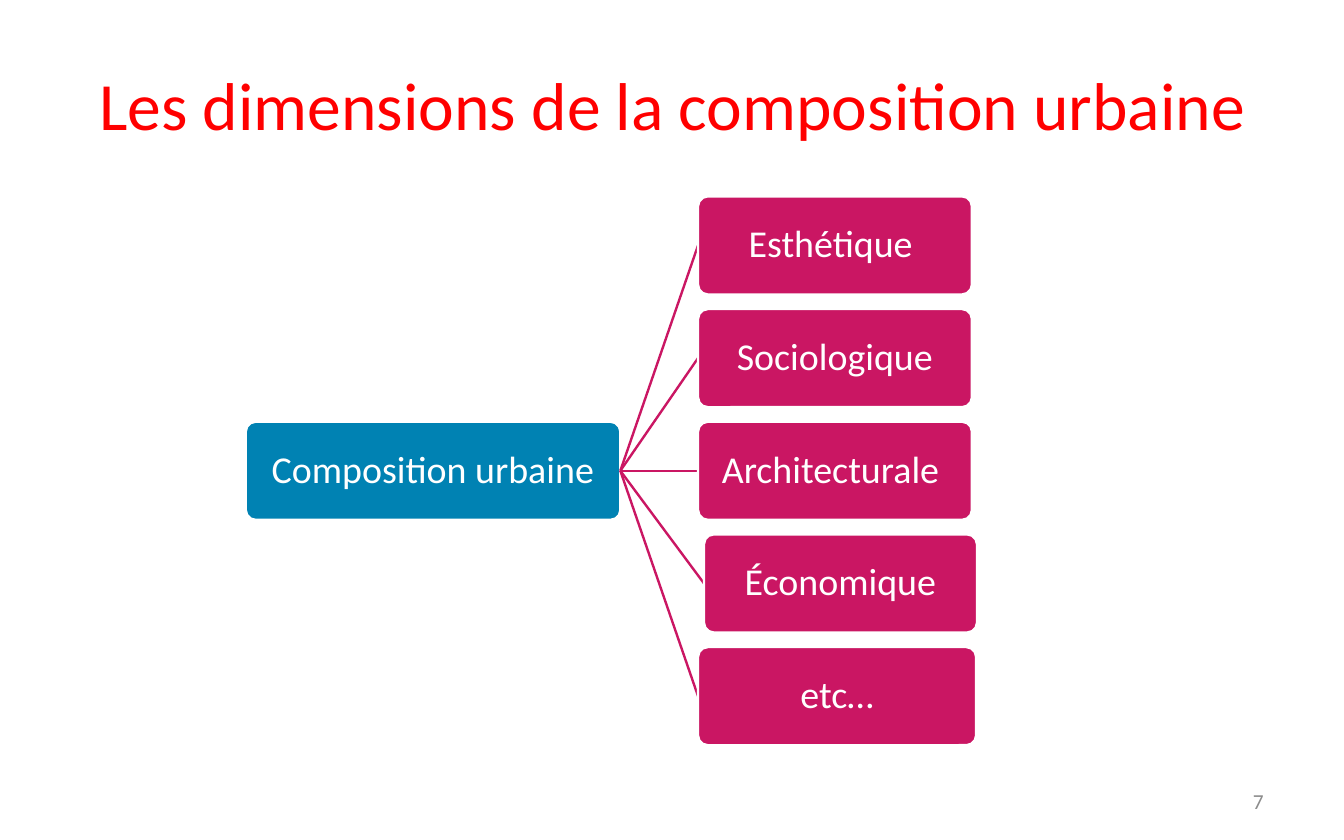
import pptx
import pptx.dml.color
import pptx.enum.shapes
import pptx.enum.text
import pptx.util
from pptx.util import Inches

FONT = "Calibri"
WHITE, RED, BLUE, PINK, GREY = "FFFFFF", "FF0000", "0082B3", "CA1663", "8C8C8C"
ALIGN = pptx.enum.text.PP_ALIGN
BOX_H = 1.15
ROW_STEP = 1.32

# Label, shift to the right, width
DIMENSIONS = [
    ("Esthétique ", 0, 3.21),
    ("Sociologique", 0, 3.21),
    ("Architecturale ", 0, 3.21),
    ("Économique", 0.07, 3.2),
    ("etc…", 0, 3.26),
]


def rgb(value):
    return pptx.dml.color.RGBColor.from_string(value)


def set_text(sp, text, size, color, align, inset_x, inset_y):
    tf = sp.text_frame
    tf.text = text
    tf.word_wrap = True
    tf.auto_size = pptx.enum.text.MSO_AUTO_SIZE.NONE
    tf.vertical_anchor = pptx.enum.text.MSO_ANCHOR.MIDDLE
    tf.margin_left = tf.margin_right = Inches(inset_x)
    tf.margin_top = tf.margin_bottom = Inches(inset_y)
    p = tf.paragraphs[0]
    p.alignment = align
    font = p.runs[0].font
    font.name = FONT
    font.size = pptx.util.Pt(size)
    font.color.rgb = rgb(color)
    return p


def add_title(s, x, y, w, h):
    sp = s.shapes.title
    sp.left, sp.top, sp.width, sp.height = map(Inches, (x, y, w, h))
    set_text(sp, "Les dimensions de la composition urbaine", 57, RED,
             ALIGN.CENTER, 0.15, 0.07)


def add_node(s, text, fill, x, y, w):
    sp = s.shapes.add_shape(pptx.enum.shapes.MSO_SHAPE.ROUNDED_RECTANGLE,
                            Inches(x), Inches(y), Inches(w), Inches(BOX_H))
    sp.adjustments[0] = 0.1
    sp.shadow.inherit = False
    sp.fill.solid()
    sp.fill.fore_color.rgb = rgb(fill)
    sp.line.color.rgb = rgb(WHITE)
    sp.line.width = pptx.util.Pt(2)
    p = set_text(sp, text, 32, WHITE, ALIGN.CENTER, 0.02, 0.02)
    p.line_spacing = 0.9
    return sp


def add_branch(s, root):
    c = s.shapes.add_connector(pptx.enum.shapes.MSO_CONNECTOR.STRAIGHT, 0, 0, 0, 0)
    c.line.color.rgb = rgb(PINK)
    c.line.width = pptx.util.Pt(2)
    pptx.oxml.ns.qn("a:effectLst")
    c._element.spPr.append(pptx.oxml.xmlchemy.OxmlElement("a:effectLst"))
    c.begin_connect(root, 3)
    return c


def add_tree(s, x, y):
    # Root, level with the middle dimension
    root_y = y + ROW_STEP * (len(DIMENSIONS) // 2)
    root = add_node(s, "Composition urbaine", BLUE, x, root_y, 4.39)

    # Dimensions, each box drawn over the end of its branch
    for i, (text, shift, w) in enumerate(DIMENSIONS):
        c = add_branch(s, root)
        sp = add_node(s, text, PINK, x + 5.3 + shift, y + i * ROW_STEP, w)
        c.end_connect(sp, 1)


def add_page_number(s, x, y, w, h):
    sp = s.shapes.add_textbox(Inches(x), Inches(y), Inches(w), Inches(h))
    set_text(sp, "7", 18, GREY, ALIGN.RIGHT, 0.15, 0.07)


def main():
    prs = pptx.Presentation()
    prs.slide_width, prs.slide_height = Inches(15.75), Inches(9.84)
    s = prs.slides.add_slide(prs.slide_layouts[5])
    add_title(s, 0.79, 0.39, 14.18, 1.64)
    add_tree(s, 2.88, 2.3)
    add_page_number(s, 11.29, 9.12, 3.67, 0.52)
    prs.save("out.pptx")


if __name__ == "__main__":
    main()
